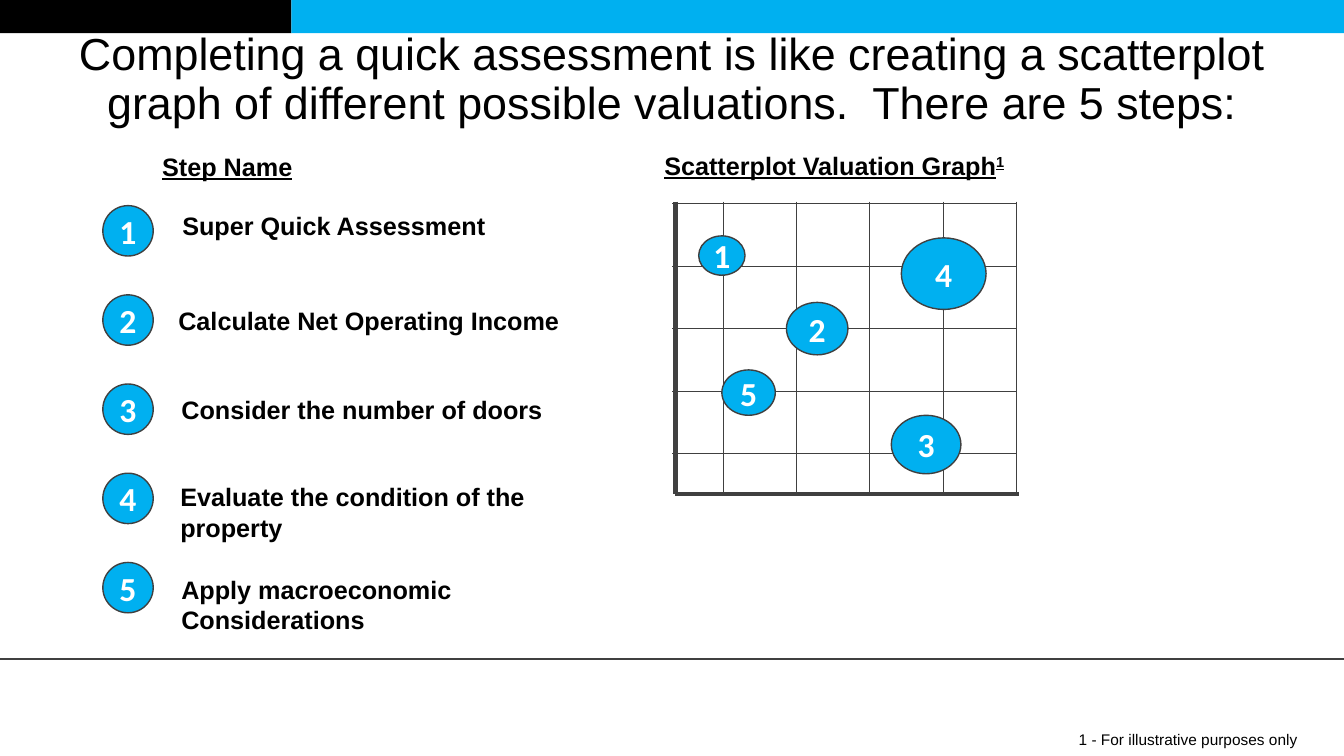
from dataclasses import dataclass

from lxml.etree import SubElement
from pptx import Presentation
from pptx.dml.color import RGBColor
from pptx.enum.shapes import MSO_CONNECTOR, MSO_SHAPE
from pptx.enum.text import MSO_ANCHOR, PP_ALIGN
from pptx.oxml.ns import qn
from pptx.util import Inches, Pt


@dataclass(frozen=True)
class Theme:
    """Colours, fonts and type sizes of the slide."""
    ink: str = "000000"
    blue: str = "00B0F0"
    grey: str = "404040"
    white: str = "FFFFFF"
    sans: str = "Arial"
    digit: str = "Calibri"
    title: int = 32
    mark: int = 24
    body: int = 18
    note: int = 11


def write(frame, text, font, size, color, bold=False, under=False,
          align=PP_ALIGN.LEFT, anchor=MSO_ANCHOR.TOP, space=None, sup=""):
    """Fill a text frame with one formatted paragraph."""
    frame.vertical_anchor = anchor
    para = frame.paragraphs[0]
    para.alignment = align
    para.line_spacing = space
    for part in filter(None, (text, sup)):
        run = para.add_run()
        run.text = part
        run.font.name, run.font.size = font, Pt(size)
        run.font.bold, run.font.underline = bold, under
        run.font.color.rgb = RGBColor.from_string(color)
    if sup:
        run._r.get_or_add_rPr().set("baseline", "30000")


class Deck:
    """Draws styled parts on the current slide."""

    def __init__(self, theme):
        """Start a deck with one blank slide."""
        self.theme = theme
        self.file = Presentation()
        self.file.slide_width, self.file.slide_height = Inches(13.33), Inches(7.5)
        self.slide = self.file.slides.add_slide(self.file.slide_layouts[6])

    def shape(self, kind, box, fill):
        """Add a flat filled shape without a line."""
        item = self.slide.shapes.add_shape(kind, *map(Inches, box))
        item.shadow.inherit = False
        item.fill.solid()
        item.fill.fore_color.rgb = RGBColor.from_string(fill)
        item.line.fill.background()
        return item

    def line(self, start, end, width):
        """Add a straight grey line."""
        item = self.slide.shapes.add_connector(
            MSO_CONNECTOR.STRAIGHT, *map(Inches, (*start, *end)))
        item.line.color.rgb = RGBColor.from_string(self.theme.grey)
        item.line.width = Pt(width)
        SubElement(item._element.spPr, qn("a:effectLst"))

    def mark(self, num, box):
        """Add a numbered blue circle."""
        item = self.shape(MSO_SHAPE.OVAL, box, self.theme.blue)
        item.line.color.rgb = RGBColor.from_string(self.theme.grey)
        item.line.width = Pt(1)
        frame = item.text_frame
        frame.word_wrap = False
        frame.margin_left = frame.margin_right = 0
        write(frame, str(num), self.theme.digit, self.theme.mark, self.theme.white,
              bold=True, align=PP_ALIGN.CENTER, anchor=MSO_ANCHOR.MIDDLE)

    def label(self, text, box, size, **style):
        """Add a wrapped text box."""
        frame = self.slide.shapes.add_textbox(*map(Inches, box)).text_frame
        frame.word_wrap = True
        write(frame, text, self.theme.sans, size, self.theme.ink, **style)


STEPS = [
    ("Super Quick Assessment", 1.71, 2.04, 3.91),
    ("Calculate Net Operating Income", 1.67, 2.98, 4.09),
    ("Consider the number of doors", 1.7, 3.86, 3.91),
    ("Evaluate the condition of the property", 1.69, 4.73, 4.66),
    ("Apply macroeconomic Considerations", 1.7, 5.65, 4.66),
]
POINTS = [
    (1, (6.93, 2.34, 0.46, 0.39)),
    (5, (7.16, 3.67, 0.53, 0.45)),
    (2, (7.8, 3, 0.61, 0.52)),
    (3, (8.84, 4.12, 0.69, 0.58)),
    (4, (8.94, 2.36, 0.84, 0.71)),
]


def main():
    """Build the slide and save it."""
    theme = Theme()
    deck = Deck(theme)

    deck.shape(MSO_SHAPE.RECTANGLE, (0, 0, 2.89, 0.33), theme.ink)
    deck.shape(MSO_SHAPE.RECTANGLE, (2.89, 0, 10.44, 0.33), theme.blue)
    deck.line((0, 6.54), (13.33, 6.54), 1.75)
    deck.label("Completing a quick assessment is like creating a scatterplot graph "
               "of different possible valuations.  There are 5 steps:",
               (0.67, 0.35, 12, 0.9), theme.title, align=PP_ALIGN.CENTER,
               anchor=MSO_ANCHOR.MIDDLE, space=0.9)

    for i in range(5):
        row, col = 2.02 + 0.62 * i, 7.17 + 0.7275 * i
        deck.line((6.67, row), (10.08, row), 0.5)
        deck.line((col, 2), (col, 4.9), 0.5)
    deck.line((6.7, 2), (6.7, 4.9), 3)
    deck.line((6.69, 4.9), (10.11, 4.9), 3)
    for num, box in POINTS:
        deck.mark(num, box)

    head = dict(bold=True, under=True)
    deck.label("Step Name", (1.51, 1.45, 3.83, 0.4), theme.body, **head)
    deck.label("Scatterplot Valuation Graph", (6.49, 1.44, 3.83, 0.4), theme.body,
               sup="1", **head)
    for i, (text, left, top, width) in enumerate(STEPS):
        deck.mark(i + 1, (1.02, 2.04 + 0.885 * i, 0.5, 0.5))
        deck.label(text, (left, top, width, 0.4), theme.body, bold=True)
    deck.label("1 - For illustrative purposes only", (10.6, 7.19, 2.85, 0.29),
               theme.note, anchor=MSO_ANCHOR.MIDDLE)

    deck.file.save("out.pptx")


if __name__ == "__main__":
    main()
